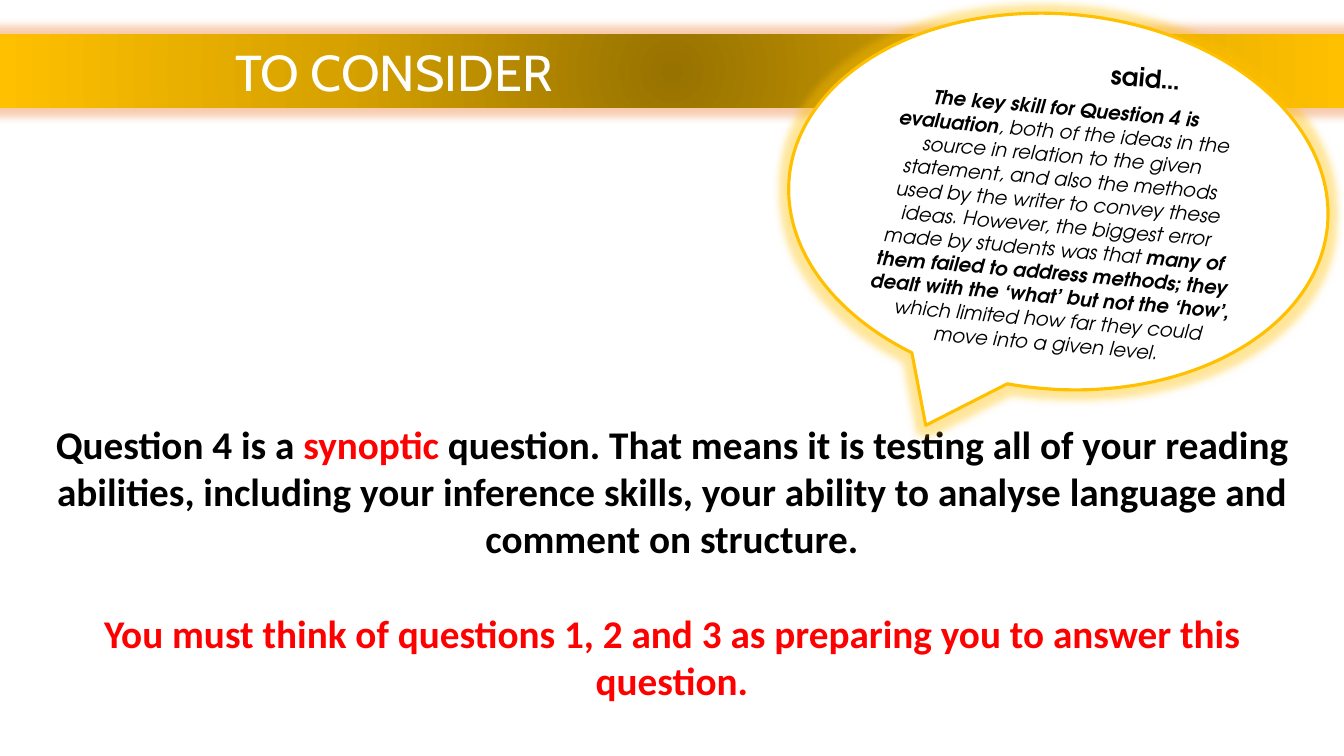
"""Builds the slide that introduces the evaluation skill of Question 4."""
import pptx
import pptx.util
import pptx.dml.color
import pptx.enum.shapes
import pptx.enum.text
import lxml.etree

Pt = pptx.util.Pt
RGB = pptx.dml.color.RGBColor.from_string
Shape = pptx.enum.shapes.MSO_SHAPE
Align = pptx.enum.text.PP_ALIGN
Anchor = pptx.enum.text.MSO_ANCHOR
Fit = pptx.enum.text.MSO_AUTO_SIZE
NS = "http://schemas.openxmlformats.org/drawingml/2006/main"

theme = {
    "black": "000000", "white": "FFFFFF", "red": "FF0000",
    "gold": "FFC000", "amber": "D7A200", "brown": "977200", "glow": "ED7D31",
    "head": ("Cabin", 36), "main": ("Calibri", 28),
    "quote": ("TeX Gyre Adventor", 14), "said": ("TeX Gyre Adventor", 18),
}


def write(par, style, runs, align=Align.CENTER):
    """Fill a paragraph with (text, colour, bold, italic) runs."""
    par.alignment = align
    for text, color, bold, slant in runs:
        run = par.add_run()
        run.text = text
        run.font.name, size = theme[style]
        run.font.size = Pt(size)
        run.font.bold, run.font.italic = bold, slant
        run.font.color.rgb = RGB(theme[color])


def glow(shape, color):
    """Give a shape a soft halo."""
    for old in shape._element.spPr.findall(f"{{{NS}}}effectLst"):
        shape._element.spPr.remove(old)
    shape._element.spPr.append(lxml.etree.fromstring(
        f'<a:effectLst xmlns:a="{NS}"><a:glow rad="{Pt(11)}"><a:srgbClr val="{theme[color]}">'
        '<a:alpha val="40000"/></a:srgbClr></a:glow></a:effectLst>'))


deck = pptx.Presentation()
deck.slide_width, deck.slide_height = Pt(960), Pt(540)
slide = deck.slides.add_slide(deck.slide_layouts[5])

title = slide.shapes.title
title.left, title.top, title.width, title.height = Pt(0), Pt(24.5), Pt(960), Pt(52.5)
stops = "".join(
    f'<a:gs pos="{place}"><a:srgbClr val="{theme[name]}"/></a:gs>'
    for place, name in ((0, "brown"), (50000, "amber"), (100000, "gold")))
title._element.spPr.append(lxml.etree.fromstring(
    f'<a:gradFill xmlns:a="{NS}" rotWithShape="1"><a:gsLst>{stops}</a:gsLst>'
    '<a:path path="circle"><a:fillToRect l="50000" t="50000" r="50000" b="50000"/>'
    '</a:path></a:gradFill>'))
glow(title, "glow")
frame = title.text_frame
frame.auto_size = Fit.NONE
frame.vertical_anchor = Anchor.MIDDLE
frame.margin_left = Pt(168)
write(frame.paragraphs[0], "head", [("TO CONSIDER", "white", False, False)], Align.LEFT)

note = slide.shapes.add_textbox(Pt(13.7), Pt(296.6), Pt(932.4), Pt(211))
frame = note.text_frame
frame.word_wrap = True
write(frame.paragraphs[0], "main", [
    ("Question 4 is a ", "black", True, False),
    ("synoptic", "red", True, False),
    (" question. That means it is testing all of your reading abilities, including your "
     "inference skills, your ability to analyse language and comment on structure.",
     "black", True, False),
])
last = frame.add_paragraph()
last.space_before = Pt(34)
write(last, "main", [
    ("You must think of questions 1, 2 and 3 as preparing you to answer this question.",
     "red", True, False),
])

quote = [
    ("The key skill for Question 4 is evaluation", "black", True, True),
    (", both of the ideas in the source in relation to the given statement, and also the "
     "methods used by the writer to convey these ideas. However, the biggest error made by "
     "students was that ", "black", False, True),
    ("many of them failed to address methods; they dealt with the ‘what’ but not the ‘how’,",
     "black", True, True),
    (" which limited how far they could move into a given level.", "black", False, True),
]
said = [("said…", "black", True, False)]
for kind, box, turn, edge, width, inset, style, runs in (
    (Shape.OVAL_CALLOUT, (563, 10, 386, 268), 5, "gold", 2.25, 37.6, "quote", quote),
    (Shape.RECTANGLE, (777.6, 37.4, 82.8, 36), 5.2, "white", 1, 3.6, "said", said),
):
    shape = slide.shapes.add_shape(kind, *map(Pt, box))
    shape.rotation = turn
    shape.shadow.inherit = False
    shape.fill.solid()
    shape.fill.fore_color.rgb = RGB(theme["white"])
    shape.line.color.rgb = RGB(theme[edge])
    shape.line.width = Pt(width)
    if kind == Shape.OVAL_CALLOUT:
        glow(shape, "gold")
    frame = shape.text_frame
    frame.word_wrap = True
    frame.vertical_anchor = Anchor.MIDDLE
    frame.margin_top = Pt(inset)
    write(frame.paragraphs[0], style, runs)

deck.save("out.pptx")
